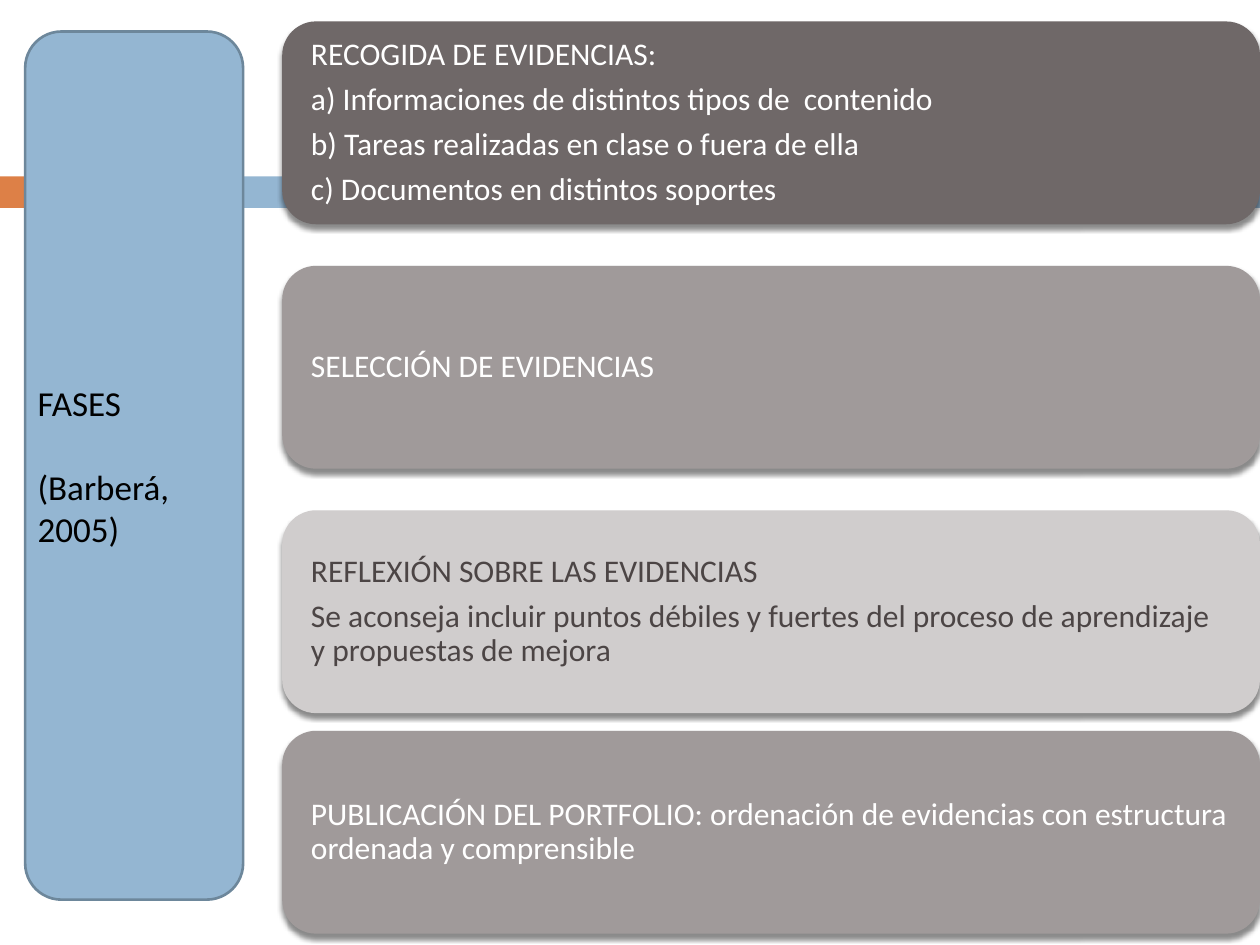
from lxml import etree
from pptx import Presentation
from pptx.dml.color import RGBColor
from pptx.enum.shapes import MSO_SHAPE as Shape
from pptx.enum.text import MSO_ANCHOR as Anchor, PP_ALIGN as Align
from pptx.oxml import parse_xml
from pptx.util import Inches, Pt

ORANGE = RGBColor(0xDD, 0x80, 0x47)
BLUE = RGBColor(0x94, 0xB6, 0xD2)
BLUE_EDGE = RGBColor(0x6D, 0x87, 0x9B)
DARK_GRAY = RGBColor(0x6F, 0x68, 0x68)
MID_GRAY = RGBColor(0xA0, 0x9A, 0x9A)
LIGHT_GRAY = RGBColor(0xD0, 0xCD, 0xCD)
TEXT_GRAY = RGBColor(0x4C, 0x45, 0x45)
WHITE = RGBColor(0xFF, 0xFF, 0xFF)
BLACK = RGBColor(0, 0, 0)

SHADOW = (
    '<a:effectLst xmlns:a="http://schemas.openxmlformats.org/drawingml/2006/main">'
    '<a:outerShdw blurRad="38100" dist="30480" dir="5400000" rotWithShape="0">'
    '<a:srgbClr val="000000"><a:alpha val="45000"/></a:srgbClr>'
    '</a:outerShdw></a:effectLst>'
)

PHASES = [
    (2.24 - 2.07, DARK_GRAY, WHITE, [
        "RECOGIDA DE EVIDENCIAS:",
        "a) Informaciones de distintos tipos de  contenido",
        "b) Tareas realizadas en clase o fuera de ella",
        "c) Documentos en distintos soportes",
    ]),
    (2.11, MID_GRAY, WHITE, ["SELECCIÓN DE EVIDENCIAS"]),
    (4.05, LIGHT_GRAY, TEXT_GRAY, [
        "REFLEXIÓN SOBRE LAS EVIDENCIAS",
        "Se aconseja incluir puntos débiles y fuertes del proceso de aprendizaje "
        "y propuestas de mejora",
    ]),
    (5.8, MID_GRAY, WHITE, [
        "PUBLICACIÓN DEL PORTFOLIO: ordenación de evidencias con estructura "
        "ordenada y comprensible",
    ]),
]

presentation = Presentation()
presentation.slide_width = Inches(10)
presentation.slide_height = Inches(7.5)
slide = presentation.slides.add_slide(presentation.slide_layouts[6])


def add_block(kind, left, top, width, height, color):
    shape = slide.shapes.add_shape(
        kind, Inches(left), Inches(top), Inches(width), Inches(height))
    shape.shadow.inherit = False
    shape.fill.solid()
    shape.fill.fore_color.rgb = color
    shape.line.fill.background()
    return shape


def write_paragraphs(frame, lines, size, color, alignment):
    frame.word_wrap = True
    frame.text = "\n".join(lines)
    for paragraph in frame.paragraphs:
        paragraph.alignment = alignment
        paragraph.font.name = "Calibri"
        paragraph.font.size = Pt(size)
        paragraph.font.color.rgb = color


add_block(Shape.RECTANGLE, 0, 1.4, 0.58, 0.25, ORANGE)
add_block(Shape.RECTANGLE, 0.65, 1.4, 9.35, 0.25, BLUE)

for top, fill, text_color, lines in PHASES:
    card = add_block(Shape.ROUNDED_RECTANGLE, 2.24, top, 7.76, 1.61, fill)
    properties = card.fill._xPr
    properties.replace(properties.find("{*}effectLst"), parse_xml(SHADOW))
    frame = card.text_frame
    frame.vertical_anchor = Anchor.MIDDLE
    frame.margin_left = frame.margin_right = Inches(0.15)
    frame.margin_top = frame.margin_bottom = Inches(0.07)
    write_paragraphs(frame, lines, 18, text_color, Align.LEFT)
    for paragraph in frame.paragraphs:
        paragraph.line_spacing = 0.9
        paragraph.space_after = Pt(6.3)

panel = add_block(Shape.ROUNDED_RECTANGLE, 0.2, 0.25, 1.73, 6.89, BLUE)
panel.line.color.rgb = BLUE_EDGE
panel.line.width = Pt(1.5)

label = slide.shapes.add_textbox(Inches(0.2), Inches(0.84), Inches(1.42), Inches(3.57))
label.text_frame.vertical_anchor = Anchor.BOTTOM
write_paragraphs(label.text_frame, ["FASES", "(Barberá, 2005)"], 20, BLACK, Align.JUSTIFY)
label.text_frame.paragraphs[1].space_before = Pt(24)

presentation.save("out.pptx")
